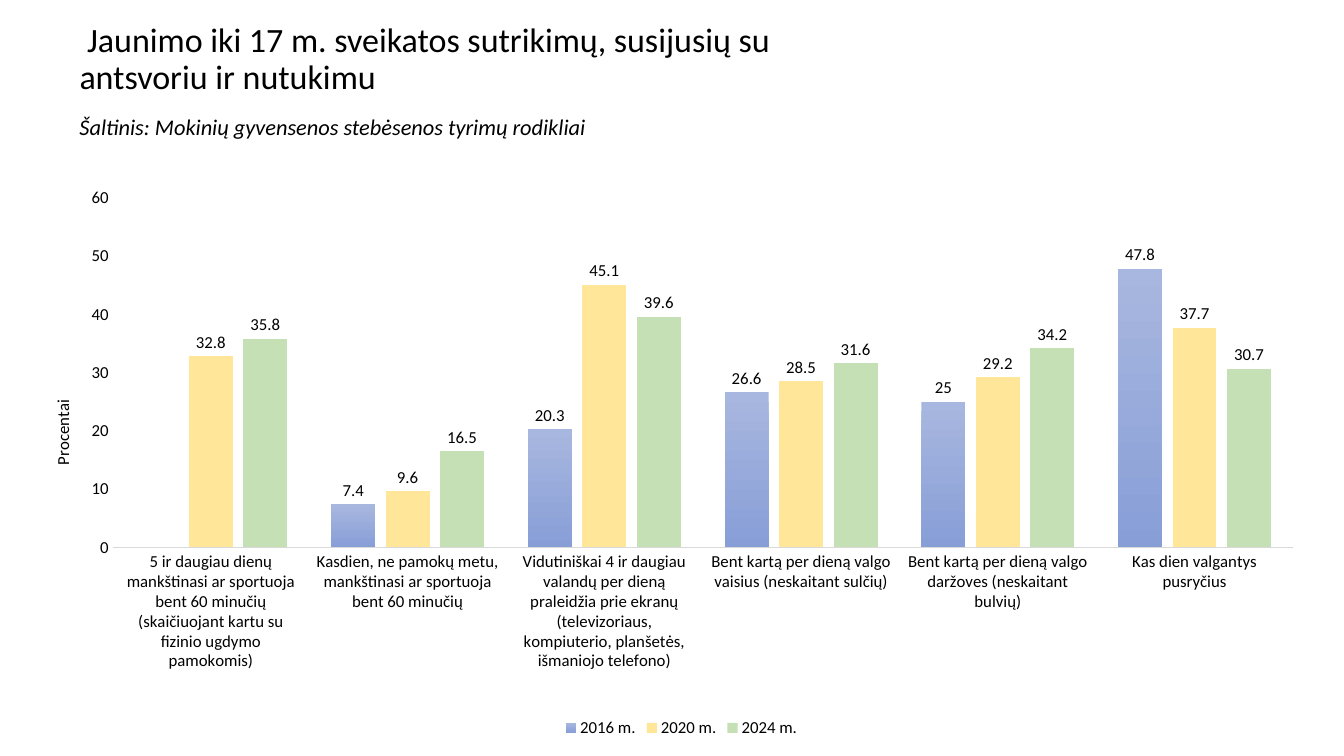
from lxml.etree import SubElement
from pptx import Presentation
from pptx.chart.data import CategoryChartData
from pptx.dml.color import RGBColor
from pptx.enum.chart import XL_CHART_TYPE, XL_LABEL_POSITION, XL_LEGEND_POSITION, XL_TICK_MARK
from pptx.enum.text import MSO_ANCHOR
from pptx.oxml.ns import qn
from pptx.util import Inches, Pt

BLACK = RGBColor(0x00, 0x00, 0x00)
AXIS_GREY = RGBColor(0xD9, 0xD9, 0xD9)
BLUE_LIGHT = RGBColor(0xA8, 0xB7, 0xDF)
BLUE_DARK = RGBColor(0x88, 0x9E, 0xD7)
YELLOW = RGBColor(0xFF, 0xE6, 0x99)
GREEN = RGBColor(0xC5, 0xE0, 0xB4)

HABITS = [
    "5 ir daugiau dienų mankštinasi ar sportuoja bent 60 minučių "
    "(skaičiuojant kartu su fizinio ugdymo pamokomis)",
    "Kasdien, ne pamokų metu, mankštinasi ar sportuoja bent 60 minučių",
    "Vidutiniškai 4 ir daugiau valandų per dieną praleidžia prie ekranų "
    "(televizoriaus, kompiuterio, planšetės, išmaniojo telefono)",
    "Bent kartą per dieną valgo vaisius (neskaitant sulčių)",
    "Bent kartą per dieną valgo daržoves (neskaitant bulvių)",
    "Kas dien valgantys pusryčius",
]
# Year, percentages, fill colours (two colours make a gradient)
YEARS = [
    ("2016 m.", (None, 7.4, 20.3, 26.6, 25, 47.8), (BLUE_LIGHT, BLUE_DARK)),
    ("2020 m.", (32.8, 9.6, 45.1, 28.5, 29.2, 37.7), (YELLOW,)),
    ("2024 m.", (35.8, 16.5, 39.6, 31.6, 34.2, 30.7), (GREEN,)),
]


class HealthSlide:
    font_name = "Calibri"
    chart_size = 12

    def __init__(self, presentation):
        self.slide = presentation.slides.add_slide(presentation.slide_layouts[6])

    def style(self, font, size, italic=False):
        font.name = self.font_name
        font.size = Pt(size)
        font.italic = italic
        font.bold = False
        font.color.rgb = BLACK

    def text(self, box, words, size, italic=False):
        frame = self.slide.shapes.add_textbox(*map(Inches, box)).text_frame
        frame.word_wrap = True
        frame.vertical_anchor = MSO_ANCHOR.MIDDLE
        paragraph = frame.paragraphs[0]
        paragraph.line_spacing = 0.9
        run = paragraph.add_run()
        run.text = words
        self.style(run.font, size, italic)

    def place(self, part, index, **settings):
        """Give a chart part a manual layout."""
        for automatic in part.findall(qn("c:layout")):
            part.remove(automatic)
        layout = SubElement(part, qn("c:layout"))
        part.insert(index, layout)
        manual = SubElement(layout, qn("c:manualLayout"))
        for tag, value in settings.items():
            SubElement(manual, qn(f"c:{tag}")).set("val", str(value))

    def column_chart(self, box, categories, series_rows):
        data = CategoryChartData()
        data.categories = categories
        for year, values, _ in series_rows:
            data.add_series(year, values)
        chart = self.slide.shapes.add_chart(
            XL_CHART_TYPE.COLUMN_CLUSTERED, *map(Inches, box), data).chart
        chart.has_title = False
        self.style(chart.font, self.chart_size)

        # Columns and value labels
        plot = chart.plots[0]
        plot.gap_width = 100
        plot.overlap = -24
        plot.vary_by_categories = False
        for series, (_, _, colours) in zip(plot.series, series_rows):
            self.column_fill(series.format.fill, colours)
            labels = series.data_labels
            labels.show_value = True
            labels.position = XL_LABEL_POSITION.OUTSIDE_END
            self.style(labels.font, self.chart_size)

        # Legend
        chart.has_legend = True
        chart.legend.position = XL_LEGEND_POSITION.BOTTOM
        chart.legend.include_in_layout = False
        self.style(chart.legend.font, self.chart_size)

        # Axes
        habits, percent = chart.category_axis, chart.value_axis
        for axis in (habits, percent):
            axis.has_major_gridlines = False
            axis.major_tick_mark = axis.minor_tick_mark = XL_TICK_MARK.NONE
            self.style(axis.tick_labels.font, self.chart_size)
        habits.format.line.color.rgb = AXIS_GREY
        habits.format.line.width = Pt(0.75)
        percent.format.line.fill.background()
        percent.minimum_scale, percent.maximum_scale, percent.major_unit = 0, 60, 10
        self.axis_title(percent, "Procentai")

        plot_area = chart.element.find(f".//{qn('c:plotArea')}")
        self.place(plot_area, 0, layoutTarget="inner", xMode="edge", yMode="edge",
                   x=0.057, y=0.079, w=0.919, h=0.592)

    def column_fill(self, fill, colours):
        if len(colours) == 1:
            fill.solid()
            fill.fore_color.rgb = colours[0]
            return
        fill.gradient()
        fill.gradient_angle = 270
        for stop, colour in zip(fill.gradient_stops, colours):
            stop.color.rgb = colour

    def axis_title(self, axis, words):
        title = axis.axis_title
        frame = title.text_frame
        run = frame.paragraphs[0].add_run()
        run.text = words
        self.style(run.font, self.chart_size)
        body = title.element.find(f".//{qn('a:bodyPr')}") if hasattr(title, "element") \
            else title.format.element.find(f".//{qn('a:bodyPr')}")
        body.set("rot", "-5400000")
        body.set("vert", "horz")
        self.place(title.element, 1, xMode="edge", yMode="edge", x=0.007, y=0.416)


def main():
    presentation = Presentation()
    presentation.slide_width = Inches(13.33)
    presentation.slide_height = Inches(7.5)
    page = HealthSlide(presentation)

    # Heading
    page.text((0.69, 0.14, 7.51, 0.91),
              " Jaunimo iki 17 m. sveikatos sutrikimų, susijusių su antsvoriu ir nutukimu", 24.3)
    # Habits by year
    page.column_chart((0.39, 1.5, 12.74, 5.86), HABITS, YEARS)
    # Source line
    page.text((0.69, 1.1, 5.24, 0.34),
              "Šaltinis: Mokinių gyvensenos stebėsenos tyrimų rodikliai", 16, italic=True)

    presentation.save("out.pptx")


if __name__ == "__main__":
    main()
